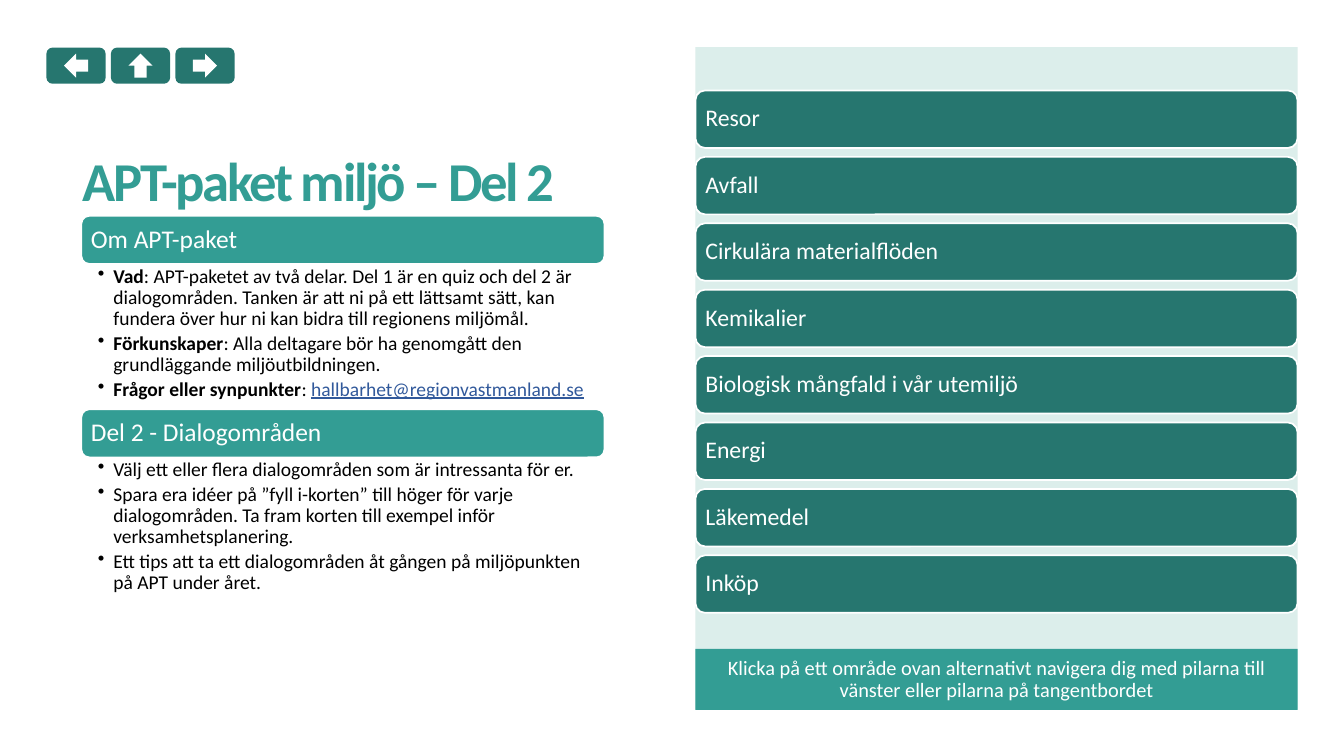
import pptx
import pptx.dml.color
import pptx.enum.shapes
import pptx.enum.text
import pptx.util
from lxml import etree

Cm = pptx.util.Cm
Pt = pptx.util.Pt
RGBColor = pptx.dml.color.RGBColor
Shape = pptx.enum.shapes.MSO_SHAPE
Anchor = pptx.enum.text.MSO_ANCHOR
Align = pptx.enum.text.PP_ALIGN

DARK_TEAL = RGBColor(0x26, 0x76, 0x6F)
TEAL = RGBColor(0x33, 0x9D, 0x94)
PALE_TEAL = RGBColor(0xDC, 0xEE, 0xEB)
LINK_BLUE = RGBColor(0x31, 0x59, 0x9B)
WHITE = RGBColor(0xFF, 0xFF, 0xFF)
BLACK = RGBColor(0, 0, 0)

TOPICS = ["Resor", "Avfall", "Cirkulära materialflöden", "Kemikalier",
          "Biologisk mångfald i vår utemiljö", "Energi", "Läkemedel", "Inköp"]

# Each bullet is a list of (text, style) runs
SECTIONS = [
    ("Om APT-paket", [
        [("Vad", "bold"),
         (": APT-paketet av två delar. Del 1 är en quiz och del 2 är dialogområden. "
          "Tanken är att ni på ett lättsamt sätt, kan fundera över hur ni kan bidra "
          "till regionens miljömål.", "plain")],
        [("Förkunskaper", "bold"),
         (": Alla deltagare bör ha genomgått den grundläggande miljöutbildningen.",
          "plain")],
        [("Frågor eller synpunkter", "bold"), (": ", "plain"),
         ("hallbarhet@regionvastmanland.se", "link")],
    ]),
    ("Del 2 - Dialogområden", [
        [("Välj ett eller flera dialogområden som är intressanta för er.", "plain")],
        [("Spara era idéer på ”fyll i-korten” till höger för varje dialogområden. "
          "Ta fram korten till exempel inför verksamhetsplanering.", "plain")],
        [("Ett tips att ta ett dialogområden åt gången på miljöpunkten på APT "
          "under året.", "plain")],
    ]),
]


class SlideBuilder:
    font = "Calibri"

    def __init__(self, slide):
        self.slide = slide

    def frame(self, shape, insets, anchor):
        frame = shape.text_frame
        frame.word_wrap = True
        frame.vertical_anchor = anchor
        (frame.margin_left, frame.margin_top,
         frame.margin_right, frame.margin_bottom) = [Cm(inset) for inset in insets]
        return frame

    def run(self, paragraph, text, size, color, bold=False):
        run = paragraph.add_run()
        run.text = text
        run.font.name = self.font
        run.font.size = Pt(size)
        run.font.bold = bold
        run.font.color.rgb = color
        return run

    def block(self, kind, left, top, width, height, fill, outlined=False):
        shape = self.slide.shapes.add_shape(
            kind, Cm(left), Cm(top), Cm(width), Cm(height))
        shape.shadow.inherit = False
        shape.fill.solid()
        shape.fill.fore_color.rgb = fill
        if outlined:
            shape.line.color.rgb = WHITE
            shape.line.width = Pt(2)
        else:
            shape.line.fill.background()
        return shape

    def bar(self, text, left, top, width, height, fill, size):
        bar = self.block(Shape.ROUNDED_RECTANGLE, left, top, width, height, fill, True)
        paragraph = self.frame(bar, [0.3] * 4, Anchor.MIDDLE).paragraphs[0]
        paragraph.alignment = Align.LEFT
        paragraph.line_spacing = 0.9
        self.run(paragraph, text, size, WHITE)

    def banner(self, text, left, top, width, height):
        banner = self.block(Shape.RECTANGLE, left, top, width, height, TEAL)
        frame = self.frame(banner, [0.25, 0.13, 0.25, 0.13], Anchor.MIDDLE)
        paragraph = frame.paragraphs[0]
        paragraph.alignment = Align.CENTER
        paragraph.line_spacing = 0.9
        self.run(paragraph, text, 24, WHITE)

    def title(self, text, left, top, width, height):
        box = self.slide.shapes.add_textbox(Cm(left), Cm(top), Cm(width), Cm(height))
        paragraph = self.frame(box, [0, 0, 0, 0.2], Anchor.BOTTOM).paragraphs[0]
        paragraph.line_spacing = 0.85
        run = self.run(paragraph, text, 64.5, TEAL, True)
        run.font._element.set("spc", "-280")

    def bullets(self, items, left, top, width, height):
        box = self.slide.shapes.add_textbox(Cm(left), Cm(top), Cm(width), Cm(height))
        frame = self.frame(box, [0.69, 0.1, 0.58, 0.1], Anchor.TOP)
        for index, item in enumerate(items):
            paragraph = frame.add_paragraph() if index else frame.paragraphs[0]
            paragraph.line_spacing = 0.9
            paragraph.space_after = Pt(4.6)
            properties = paragraph._p.get_or_add_pPr()
            properties.set("marL", str(Cm(0.64)))
            properties.set("indent", str(-Cm(0.64)))
            bullet = etree.SubElement(properties, pptx.oxml.ns.qn("a:buChar"))
            bullet.set("char", "•")
            for text, style in item:
                color = LINK_BLUE if style == "link" else BLACK
                run = self.run(paragraph, text, 23, color, style == "bold")
                run.font.underline = style == "link"

    def arrow_button(self, left, top, rotation):
        self.block(Shape.ROUNDED_RECTANGLE, left, top, 2.46, 1.5, DARK_TEAL)
        arrow = self.block(Shape.RIGHT_ARROW, left + 0.73, top + 0.25, 1, 1, WHITE)
        arrow.rotation = rotation


def main():
    deck = pptx.Presentation()
    deck.slide_width, deck.slide_height = Cm(55.85), Cm(31.42)
    builder = SlideBuilder(deck.slides.add_slide(deck.slide_layouts[6]))

    # Right panel with the topic list
    panel_left, panel_width = 28.9, 25.02
    builder.block(Shape.RECTANGLE, panel_left, 1.96, panel_width, 27.5, PALE_TEAL)
    for row, topic in enumerate(TOPICS):
        builder.bar(topic, panel_left, 3.76 + 2.76 * row, panel_width, 2.39,
                    DARK_TEAL, 28)

    # Title and the two sections below it
    builder.title("APT-paket miljö – Del 2", 3.45, 3.4, 21.74, 5.66)
    section_left, section_width, heading_height = 3.38, 21.74, 2
    for row, (heading, items) in enumerate(SECTIONS):
        top = 8.97 + 8.04 * row
        builder.bar(heading, section_left, top, section_width, heading_height, TEAL, 30)
        builder.bullets(items, section_left, top + heading_height, section_width, 6.04)

    # Navigation: back, up, forward
    for column, rotation in enumerate([180, 270, 0]):
        builder.arrow_button(1.93 + 2.68 * column, 1.98, rotation)

    # Instruction under the topics
    builder.banner("Klicka på ett område ovan alternativt navigera dig med pilarna "
                   "till vänster eller pilarna på tangentbordet",
                   panel_left, 26.97, panel_width, 2.54)

    deck.save("out.pptx")


if __name__ == "__main__":
    main()
